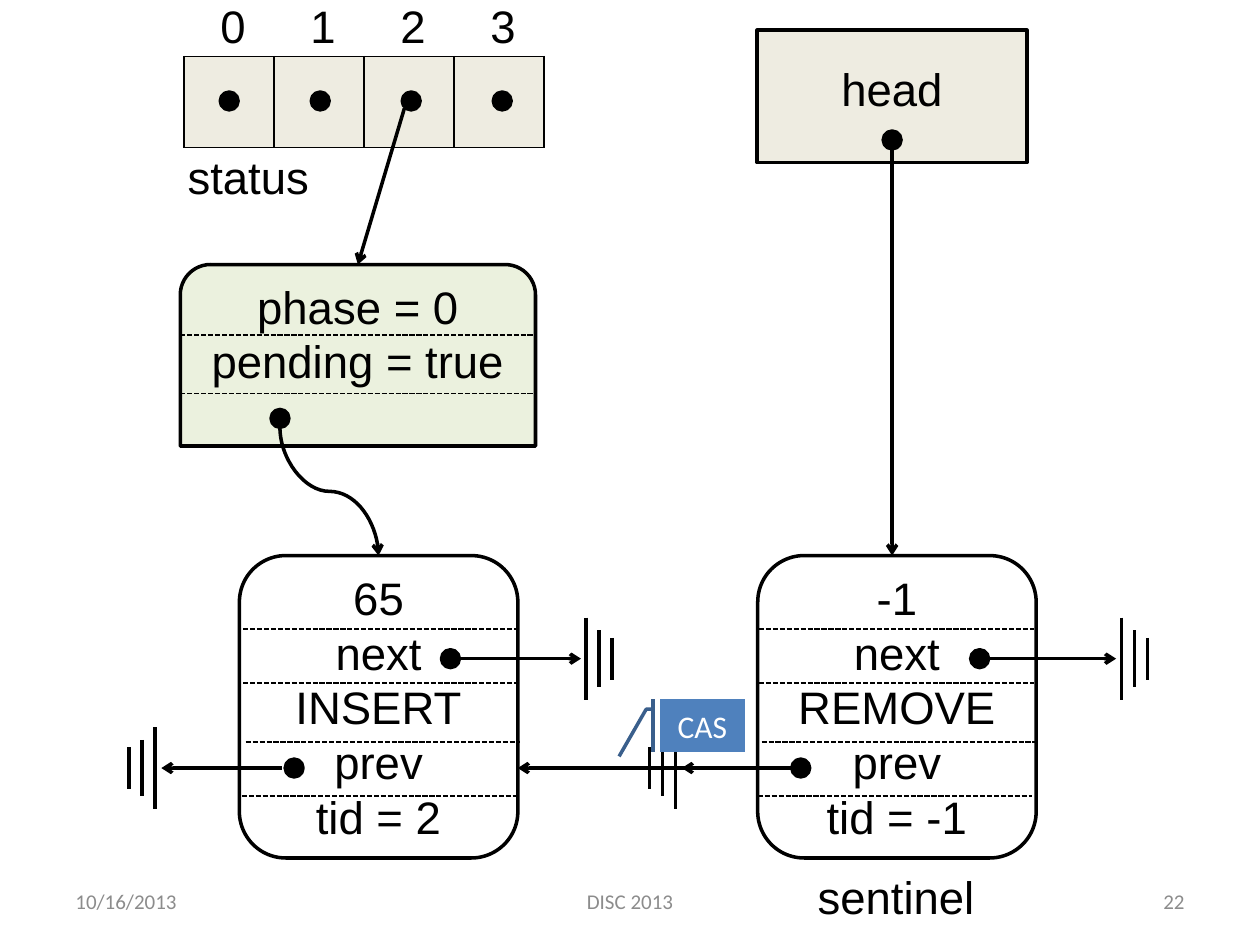
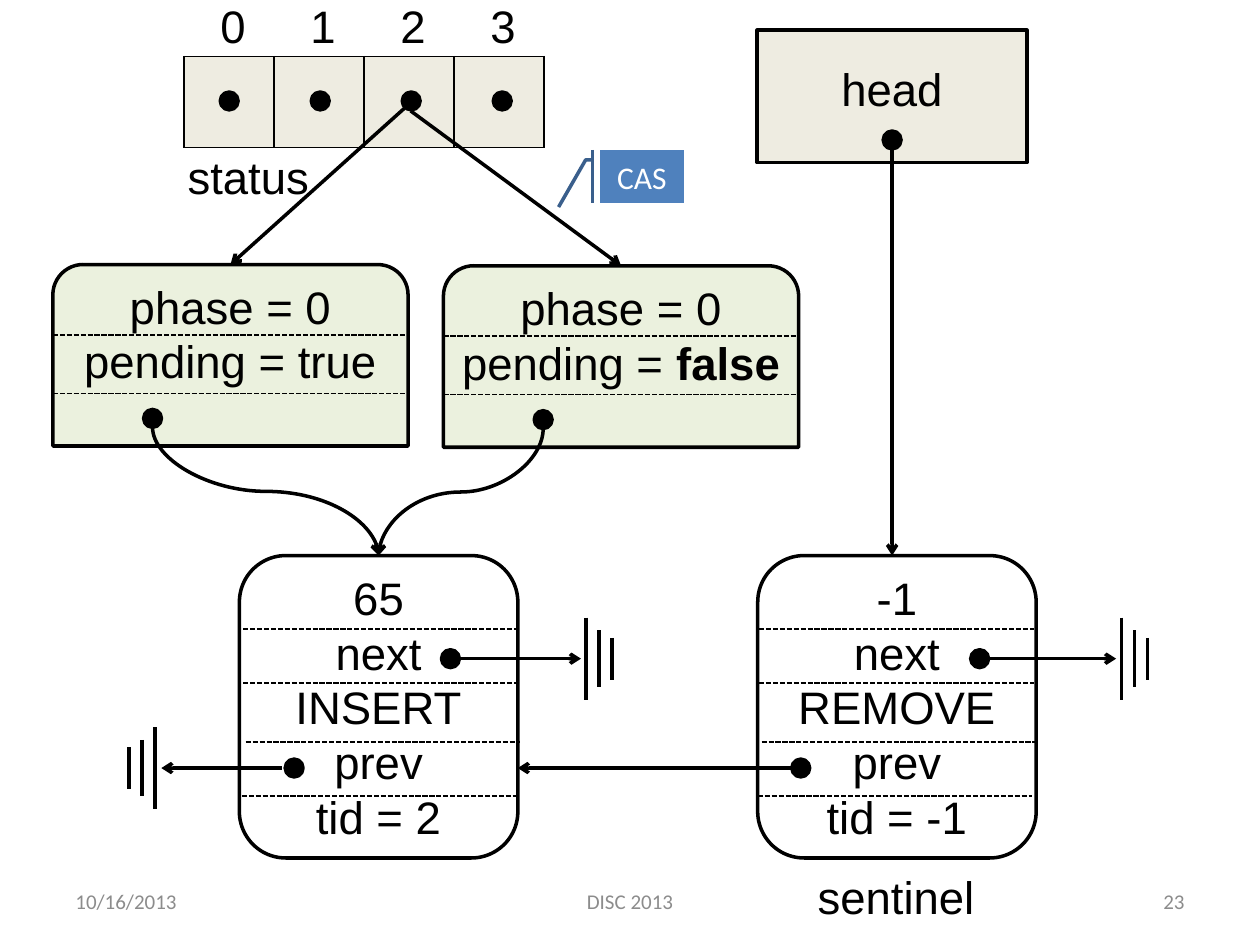
import dataclasses

import pptx
import pptx.dml.color
import pptx.enum.dml
import pptx.enum.shapes
import pptx.enum.text
import pptx.oxml
import pptx.oxml.ns
import pptx.util

Pt = pptx.util.Pt
SHAPE = pptx.enum.shapes.MSO_SHAPE
CONNECTOR = pptx.enum.shapes.MSO_CONNECTOR
ALIGN = pptx.enum.text.PP_ALIGN
ANCHOR = pptx.enum.text.MSO_ANCHOR

INDICES = ["0", "1", "2", "3"]
NODES = [
    {"left": 136.8, "rows": ["65", "next", "INSERT", "prev", "tid = 2"],
     "next_dot": 257.4, "prev_dot": 168.1, "next_ground": 335, "row_shift": 1.4},
    {"left": 433, "rows": ["-1", "next", "REMOVE", "prev", "tid = -1"],
     "next_dot": 559.8, "prev_dot": 457.6, "next_ground": 640.8, "row_shift": 0},
]
PENDING_TRUE = [[("phase = 0", False)], [("pending = true", False)]]
PENDING_FALSE = [[("phase = 0", False)], [("pending = ", False), ("false", True)]]
SLIDES = [
    {"number": "22", "callout": (377.3, 399.6), "sentinel_ground": True,
     "records": [{"at": (103, 151.2), "text": PENDING_TRUE, "source": (231.1, 61.9)}]},
    {"number": "23", "callout": (342.7, 85.7), "sentinel_ground": False,
     "records": [{"at": (30.2, 151.2), "text": PENDING_TRUE, "source": (231.1, 61.9)},
                 {"at": (253.4, 151.9), "text": PENDING_FALSE, "source": (234.7, 63.4)}]},
]
FOOTERS = [(36, 168, "10/16/2013", ALIGN.LEFT), (246, 228, "DISC 2013", ALIGN.CENTER)]

STATUS_LEFT, STATUS_TOP, CELL_WIDTH, CELL_HEIGHT = 105.1, 32.4, 51.43, 51.8
NODE_TOP, NODE_WIDTH, NODE_HEIGHT = 317.5, 159.1, 172.8
NODE_RULES = [(0.7, 41.8), (0.7, 72.7), (2.2, 106.6), (0, 137.5)]
NEXT_Y, PREV_Y = 376.4, 438.9
RECORD_WIDTH, RECORD_HEIGHT = 203, 103.7
GROUND_HALVES = [23.4, 16.1, 11.9]


@dataclasses.dataclass(frozen=True)
class Theme:
    ink: str = "000000"
    sand: str = "EEECE1"
    green: str = "EBF1DE"
    blue: str = "4F81BD"
    blue_edge: str = "3A5F8C"
    white: str = "FFFFFF"
    grey: str = "8C8C8C"
    label_font: str = "Arial"
    small_font: str = "Calibri"
    label: int = 26
    callout: int = 18
    footer: int = 12
    stroke: int = 2
    rule: int = 1


THEME = Theme()
LABEL = (THEME.label_font, THEME.label, THEME.ink)
CALLOUT = (THEME.small_font, THEME.callout, THEME.white)
FOOTER = (THEME.small_font, THEME.footer, THEME.grey)


def rgb(value):
    return pptx.dml.color.RGBColor.from_string(value)


def add_xml(parent, tag, **attributes):
    child = parent.makeelement(pptx.oxml.ns.qn(tag), attributes)
    parent.append(child)
    return child


def write(frame, paragraphs, style, align, anchor, insets):
    font, size, color = style
    frame.margin_left, frame.margin_top, frame.margin_right, frame.margin_bottom = map(Pt, insets)
    frame.vertical_anchor = anchor
    for index, spans in enumerate(paragraphs):
        para = frame.add_paragraph() if index else frame.paragraphs[0]
        para.alignment = align
        for text, bold in spans:
            span = para.add_run()
            span.text = text
            span.font.name = font
            span.font.size = Pt(size)
            span.font.bold = bold
            span.font.color.rgb = rgb(color)


def plain(*lines):
    return [[(line, False)] for line in lines]


def add_box(page, kind, left, top, width, height, fill=None, edge=THEME.ink):
    box = page.shapes.add_shape(kind, Pt(left), Pt(top), Pt(width), Pt(height))
    box.shadow.inherit = False
    if fill:
        box.fill.solid()
        box.fill.fore_color.rgb = rgb(fill)
    else:
        box.fill.background()
    box.line.color.rgb = rgb(edge)
    box.line.width = Pt(THEME.stroke)
    return box


def add_dot(page, x, y):
    add_box(page, SHAPE.OVAL, x - 5.1, y - 5.1, 10.2, 10.2, THEME.ink)


def add_line(page, start, end, arrow=False, dashed=False, kind=CONNECTOR.STRAIGHT):
    line = page.shapes.add_connector(kind, *map(Pt, (*start, *end)))
    line.line.color.rgb = rgb(THEME.ink)
    line.line.width = Pt(THEME.rule if dashed else THEME.stroke)
    if dashed:
        line.line.dash_style = pptx.enum.dml.MSO_LINE.SQUARE_DOT
    properties = line._element.spPr
    if arrow:
        add_xml(properties.find(pptx.oxml.ns.qn("a:ln")), "a:tailEnd", type="arrow")
    add_xml(properties, "a:effectLst")
    return line


def add_falling_curve(page, start, end):
    (x1, y1), (x2, y2) = start, end
    across, down = abs(x2 - x1), y2 - y1
    left, top = (x1 + x2 - down) / 2, (y1 + y2 - across) / 2
    curve = add_line(page, (left, top), (left + down, top + across), True, kind=CONNECTOR.CURVE)
    frame = curve._element.spPr.find(pptx.oxml.ns.qn("a:xfrm"))
    if x2 > x1:
        frame.set("rot", "16200000")
        frame.set("flipH", "1")
    else:
        frame.set("rot", "5400000")


def add_ground(page, x, y, direction):
    for index, half in enumerate(GROUND_HALVES):
        bar = x + direction * 7.4 * index
        add_line(page, (bar, y - half), (bar, y + half))


def add_grid(page, left, top):
    shape = page.shapes.add_table(1, len(INDICES), Pt(left), Pt(top),
                                  Pt(CELL_WIDTH * len(INDICES)), Pt(CELL_HEIGHT))
    table = shape.table
    table.first_row = table.horz_banding = False
    style = table._tbl.tblPr.find(pptx.oxml.ns.qn("a:tableStyleId"))
    style.text = "{2D5ABB26-0587-4C30-8999-92F81FD0307C}"
    return [table.cell(0, column) for column in range(len(INDICES))]


def add_cell_borders(cell):
    properties = cell._tc.get_or_add_tcPr()
    for position, side in enumerate(("a:lnL", "a:lnR", "a:lnT", "a:lnB")):
        border = add_xml(properties, side, w=str(Pt(THEME.rule)))
        add_xml(add_xml(border, "a:solidFill"), "a:srgbClr", val=THEME.ink)
        properties.insert(position, border)


def add_text(page, left, top, width, height, text, style, align=ALIGN.LEFT,
             anchor=ANCHOR.TOP, insets=(10, 5, 10, 5), wrap=False):
    box = page.shapes.add_textbox(Pt(left), Pt(top), Pt(width), Pt(height))
    box.text_frame.word_wrap = wrap
    write(box.text_frame, plain(text), style, align, anchor, insets)


def add_status(page):
    for index, cell in enumerate(add_grid(page, STATUS_LEFT, STATUS_TOP)):
        cell.fill.solid()
        cell.fill.fore_color.rgb = rgb(THEME.sand)
        add_cell_borders(cell)
        add_dot(page, 131 + 52 * index, 57.7)
    for cell, index in zip(add_grid(page, 116, -3.6), INDICES):
        cell.fill.background()
        write(cell.text_frame, plain(index), LABEL, ALIGN.LEFT, ANCHOR.TOP, (10, 5, 10, 5))
        cell.margin_left, cell.margin_top, cell.margin_right, cell.margin_bottom = map(Pt, (10, 5, 10, 5))
    add_text(page, 97.2, 79.9, 90.7, 41.8, "status", LABEL)


def add_head(page):
    head = add_box(page, SHAPE.RECTANGLE, 432.7, 17.3, 154.1, 75.6, THEME.sand)
    write(head.text_frame, plain("head"), LABEL, ALIGN.CENTER, ANCHOR.MIDDLE, (7.2, 1.4, 7.2, 10.8))
    add_dot(page, 509.8, 80)
    add_line(page, (509.8, 85.7), (509.8, NODE_TOP), arrow=True)


def add_node(page, node):
    left = node["left"]
    box = add_box(page, SHAPE.ROUNDED_RECTANGLE, left, NODE_TOP, NODE_WIDTH, NODE_HEIGHT)
    write(box.text_frame, plain(*node["rows"]), LABEL, ALIGN.CENTER, ANCHOR.MIDDLE, (0, 3.6, 0, 3.6))
    for shift, drop in NODE_RULES:
        x, y = left + shift + node["row_shift"], NODE_TOP + drop
        add_line(page, (x, y), (x + 157, y), dashed=True)
    add_dot(page, node["next_dot"], NEXT_Y)
    add_dot(page, node["prev_dot"], PREV_Y)
    add_line(page, (node["next_dot"], NEXT_Y), (node["next_ground"] - 3, NEXT_Y), arrow=True)
    add_ground(page, node["next_ground"], NEXT_Y, 1)


def add_record(page, record):
    left, top = record["at"]
    box = add_box(page, SHAPE.ROUND_2_SAME_RECTANGLE, left, top, RECORD_WIDTH, RECORD_HEIGHT, THEME.green)
    write(box.text_frame, record["text"], LABEL, ALIGN.CENTER, ANCHOR.MIDDLE, (0, 3.6, 0, 33.5))
    for drop in (40.3, 73.6):
        add_line(page, (left, top + drop), (left + RECORD_WIDTH, top + drop), dashed=True)
    dot = left + 57
    add_dot(page, dot, top + 87.9)
    add_line(page, record["source"], (left + RECORD_WIDTH / 2, top), arrow=True)
    add_falling_curve(page, (dot, top + 92.9), (NODES[0]["left"] + NODE_WIDTH / 2, NODE_TOP))


def add_prev_links(page, sentinel_ground):
    inserted, sentinel = NODES
    grounds = [(inserted["prev_dot"] - 7, 88.6)]
    if sentinel_ground:
        grounds.append((sentinel["prev_dot"], 386))
    for start, x in grounds:
        add_line(page, (start, PREV_Y), (x + 3.6, PREV_Y), arrow=True)
        add_ground(page, x, PREV_Y, -1)
    add_line(page, (sentinel["prev_dot"], PREV_Y), (inserted["left"] + NODE_WIDTH, PREV_Y), arrow=True)


def add_callout(page, left, top):
    box = add_box(page, SHAPE.LINE_CALLOUT_2_ACCENT_BAR, left, top, 48.2, 30.2, THEME.blue, THEME.blue_edge)
    for index, value in enumerate((0.188, -0.083, 0.188, -0.167, 1.081, -0.488)):
        box.adjustments[index] = value
    write(box.text_frame, plain("CAS"), CALLOUT, ALIGN.CENTER, ANCHOR.MIDDLE, (7.2, 3.6, 7.2, 3.6))


def add_footers(page, number):
    for left, width, text, align in FOOTERS + [(516, 168, number, ALIGN.RIGHT)]:
        add_text(page, left, 500.5, width, 28.8, text, FOOTER, align, ANCHOR.MIDDLE,
                 (7.2, 3.6, 7.2, 3.6), True)


def main():
    deck = pptx.Presentation()
    deck.slide_width, deck.slide_height = Pt(720), Pt(540)
    for content in SLIDES:
        page = deck.slides.add_slide(deck.slide_layouts[6])
        add_status(page)
        add_head(page)
        for node in NODES:
            add_node(page, node)
        add_text(page, 457.2, 491.8, 111.6, 41.8, "sentinel", LABEL)
        add_prev_links(page, content["sentinel_ground"])
        for record in content["records"]:
            add_record(page, record)
        add_callout(page, *content["callout"])
        add_footers(page, content["number"])
    deck.save("out.pptx")


if __name__ == "__main__":
    main()
